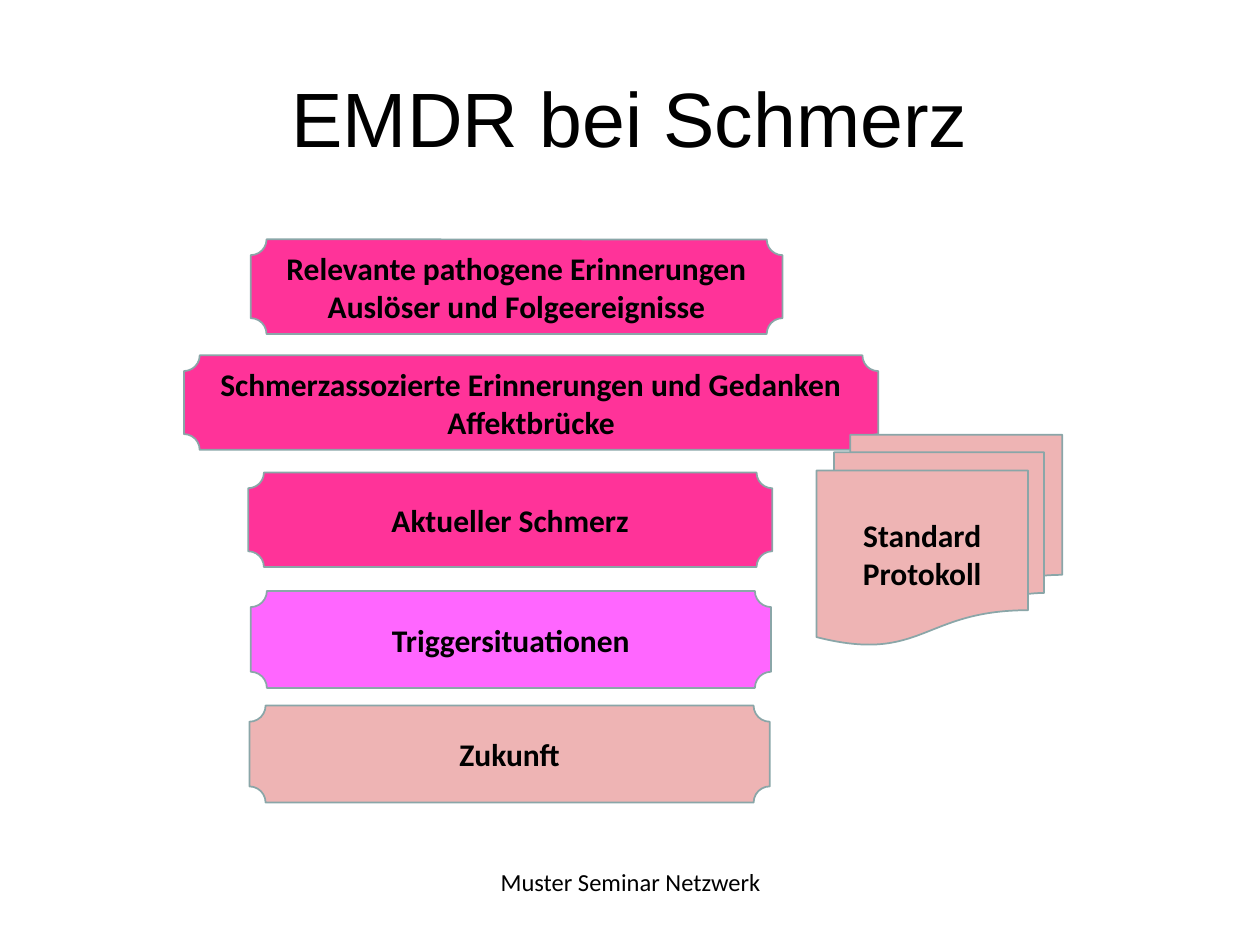
from pptx import Presentation
from pptx.dml.color import RGBColor
from pptx.enum.shapes import MSO_SHAPE
from pptx.enum.text import MSO_ANCHOR, PP_ALIGN
from pptx.util import Inches, Pt

PLAQUE = MSO_SHAPE.PLAQUE
DOCUMENTS = MSO_SHAPE.FLOWCHART_MULTIDOCUMENT
MIDDLE, TOP = MSO_ANCHOR.MIDDLE, MSO_ANCHOR.TOP
CENTER = PP_ALIGN.CENTER

PINK, VIOLET, ROSE = "FF3399", "FF66FF", "EEB4B4"
OUTLINE, BLACK = "8AA6A8", "000000"


def color(value):
    return RGBColor.from_string(value)


def write(box, lines, size, font="Calibri", bold=False, anchor=MIDDLE):
    """Fill a box with centred paragraphs, one for each line."""
    frame = box.text_frame
    frame.word_wrap = True
    frame.vertical_anchor = anchor
    for index, line in enumerate(lines):
        para = frame.add_paragraph() if index else frame.paragraphs[0]
        para.alignment = CENTER
        span = para.add_run()
        span.text = line
        span.font.name = font
        span.font.size = Pt(size)
        span.font.bold = bold
        span.font.color.rgb = color(BLACK)


deck = Presentation()
deck.slide_width, deck.slide_height = Inches(10), Inches(7.5)
page = deck.slides.add_slide(deck.slide_layouts[5])

title = page.shapes.title
title.left, title.top = Inches(0.5), Inches(0.3)
title.width, title.height = Inches(9), Inches(1.25)
write(title, ["EMDR bei Schmerz"], 44, font="Arial")

footer = page.shapes.add_textbox(Inches(3.42), Inches(6.83), Inches(3.17), Inches(0.52))
write(footer, ["Muster Seminar Netzwerk"], 14, anchor=TOP)

# kind, left, top, width, height, fill, lines; from back to front
steps = [
    (PLAQUE, 1.99, 1.9, 4.22, 0.75, PINK,
     ["Relevante pathogene Erinnerungen", "Auslöser und Folgeereignisse"]),
    (PLAQUE, 1.46, 2.82, 5.51, 0.75, PINK,
     ["Schmerzassozierte Erinnerungen und Gedanken", "Affektbrücke"]),
    (PLAQUE, 1.97, 3.75, 4.16, 0.75, PINK, ["Aktueller Schmerz"]),
    (PLAQUE, 1.99, 4.69, 4.13, 0.77, VIOLET, ["Triggersituationen"]),
    (DOCUMENTS, 6.48, 3.45, 1.95, 1.67, ROSE, ["Standard", "Protokoll"]),
    (PLAQUE, 1.98, 5.6, 4.13, 0.77, ROSE, ["Zukunft"]),
]
for kind, left, top, width, height, fill, lines in steps:
    box = page.shapes.add_shape(kind, Inches(left), Inches(top), Inches(width), Inches(height))
    box.shadow.inherit = False
    box.fill.solid()
    box.fill.fore_color.rgb = color(fill)
    box.line.color.rgb = color(OUTLINE)
    box.line.width = Pt(1)
    write(box, lines, 18, bold=True)

deck.save("out.pptx")
